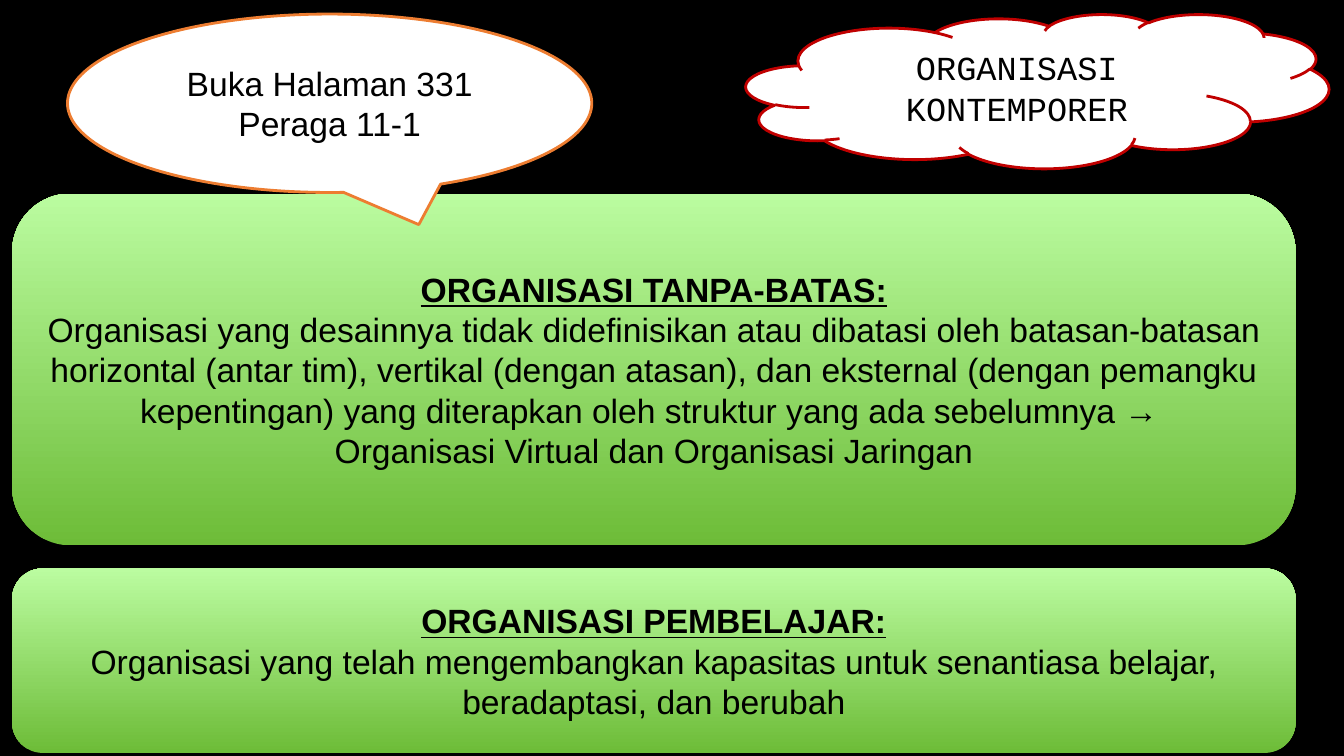
import pptx
import pptx.dml.color
import pptx.enum.shapes
import pptx.enum.text
import pptx.util

Inches = pptx.util.Inches
Shapes = pptx.enum.shapes.MSO_SHAPE

COLORS = {
    "background": "000000",
    "text": "000000",
    "bubble": "FFFFFF",
    "cloud_line": "C00000",
    "callout_line": "ED7D31",
    "panel_bottom": "6DBC38",
    "panel_top": "BBFCA0",
}
PANEL_LEFT, PANEL_WIDTH = 0.12, 12.73
BUBBLE_TOP = 0.14


def rgb(name):
    return pptx.dml.color.RGBColor.from_string(COLORS[name])


def add_outline(slide, kind, box):
    outline = slide.shapes.add_shape(kind, *(Inches(length) for length in box))
    outline.shadow.inherit = False
    frame = outline.text_frame
    frame.word_wrap = True
    frame.vertical_anchor = pptx.enum.text.MSO_ANCHOR.MIDDLE
    return outline


def write_line(paragraph, text, font_name="Arial", heading=False):
    paragraph.alignment = pptx.enum.text.PP_ALIGN.CENTER
    run = paragraph.add_run()
    run.text = text
    run.font.name = font_name
    run.font.size = pptx.util.Pt(24)
    run.font.bold = heading
    run.font.underline = heading
    run.font.color.rgb = rgb("text")


def add_bubble(slide, kind, box, text, line_color, font_name="Arial"):
    bubble = add_outline(slide, kind, box)
    bubble.fill.solid()
    bubble.fill.fore_color.rgb = rgb("bubble")
    bubble.line.color.rgb = rgb(line_color)
    bubble.line.width = pptx.util.Pt(2)
    write_line(bubble.text_frame.paragraphs[0], text, font_name)
    return bubble


def add_definition(slide, top, height, term, explanations):
    """Place a green panel with an underlined term above its explanation."""
    panel = add_outline(slide, Shapes.ROUNDED_RECTANGLE,
                        (PANEL_LEFT, top, PANEL_WIDTH, height))
    panel.line.fill.background()
    panel.fill.gradient()
    panel.fill.gradient_angle = 90
    stops = panel.fill.gradient_stops
    for stop, position, color in zip(stops, (0, 1), ("panel_bottom", "panel_top")):
        stop.position = position
        stop.color.rgb = rgb(color)
    write_line(panel.text_frame.paragraphs[0], term, heading=True)
    for explanation in explanations:
        write_line(panel.text_frame.add_paragraph(), explanation)


def build_contemporary_organizations(presentation):
    slide = presentation.slides.add_slide(presentation.slide_layouts[6])
    slide.background.fill.solid()
    slide.background.fill.fore_color.rgb = rgb("background")

    add_bubble(slide, Shapes.CLOUD, (7.4, BUBBLE_TOP, 5.78, 1.53),
               "ORGANISASI KONTEMPORER", "cloud_line", "Courier New")
    add_definition(slide, 1.92, 3.49, "ORGANISASI TANPA-BATAS:", [
        "Organisasi yang desainnya tidak didefinisikan atau dibatasi oleh "
        "batasan-batasan horizontal (antar tim), vertikal (dengan atasan), "
        "dan eksternal (dengan pemangku kepentingan) yang diterapkan oleh "
        "struktur yang ada sebelumnya → ",
        "Organisasi Virtual dan Organisasi Jaringan",
    ])
    add_definition(slide, 5.64, 1.83, "ORGANISASI PEMBELAJAR:", [
        "Organisasi yang telah mengembangkan kapasitas untuk senantiasa "
        "belajar, beradaptasi, dan berubah",
    ])
    page_reference = add_bubble(slide, Shapes.OVAL_CALLOUT,
                                (0.67, BUBBLE_TOP, 5.2, 1.77),
                                "Buka Halaman 331 Peraga 11-1", "callout_line")
    page_reference.adjustments[0] = 0.17
    page_reference.adjustments[1] = 0.68


def main():
    presentation = pptx.Presentation()
    presentation.slide_width = Inches(13.33)
    presentation.slide_height = Inches(7.5)
    build_contemporary_organizations(presentation)
    presentation.save("out.pptx")


if __name__ == "__main__":
    main()
